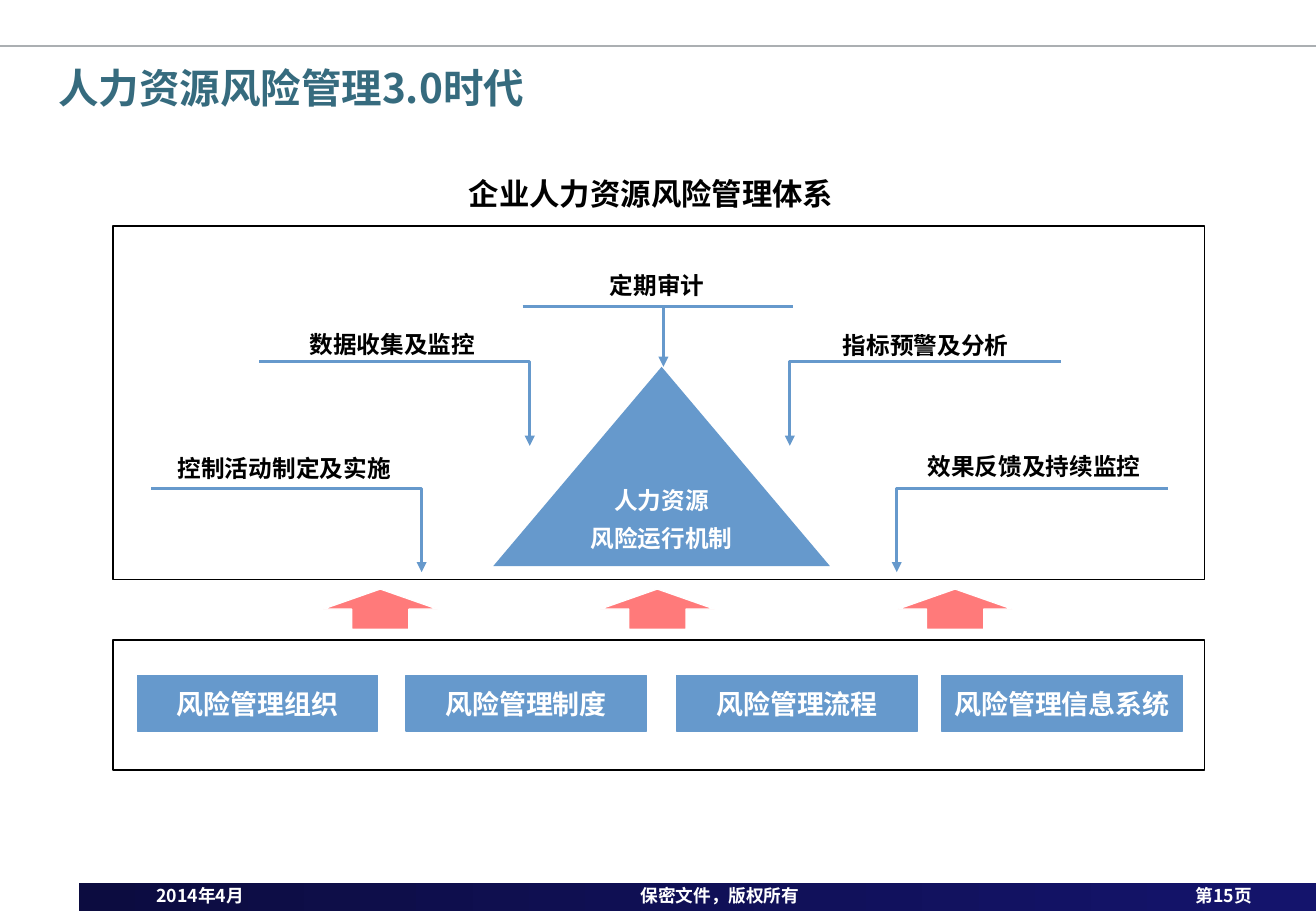
from lxml import etree
from pptx import Presentation, util as u
from pptx.dml.color import RGBColor
from pptx.enum import shapes, text
from pptx.oxml.ns import qn

FONT = "Noto Sans CJK SC"
BLUE, WHITE, BLACK = "6699CC", "FFFFFF", "000000"
CENTER, LEFT = text.PP_ALIGN.CENTER, text.PP_ALIGN.LEFT
TOP, MIDDLE, BOTTOM = (text.MSO_ANCHOR.TOP, text.MSO_ANCHOR.MIDDLE,
                       text.MSO_ANCHOR.BOTTOM)


def rgb(value):
    return RGBColor.from_string(value)


def apply(target, values):
    for name, value in values.items():
        setattr(target, name, value)


class SlideBuilder:
    def __init__(self, slide):
        self.slide = slide

    def put_text(self, item, words, size, color, font=FONT, anchor=MIDDLE,
                 wrap=True, inset=None, **paragraph_format):
        """Fill a shape with one bold paragraph per line of words."""
        frame = item.text_frame
        apply(frame, {"word_wrap": wrap, "vertical_anchor": anchor})
        if inset is not None:
            sides = ("left", "top", "right", "bottom")
            apply(frame, {f"margin_{side}": u.Inches(inset) for side in sides})
        for number, line in enumerate(words.split("\n")):
            paragraph = frame.add_paragraph() if number else frame.paragraphs[0]
            apply(paragraph, {"alignment": CENTER, **paragraph_format})
            run = paragraph.add_run()
            run.text = line
            apply(run.font, {"name": font, "size": u.Pt(size), "bold": True})
            run.font.color.rgb = rgb(color)
            east_asian = etree.SubElement(run.font._element, qn("a:ea"))
            east_asian.set("typeface", FONT)

    def label(self, box, words, size, color, **style):
        item = self.slide.shapes.add_textbox(*map(u.Inches, box))
        self.put_text(item, words, size, color, **style)

    def shape(self, kind, box, fill=None, line=None, alpha=None):
        item = self.slide.shapes.add_shape(kind, *map(u.Inches, box))
        item.shadow.inherit = False
        if fill:
            item.fill.solid()
            item.fill.fore_color.rgb = rgb(fill)
        else:
            item.fill.background()
        if alpha:
            color = item.fill._xPr.find(f".//{qn('a:srgbClr')}")
            etree.SubElement(color, qn("a:alpha")).set("val", str(alpha * 1000))
        self.outline(item, line, 0.75)
        return item

    def outline(self, item, color, width, arrow=None):
        """Style a line; arrow names the end element that gets a triangle."""
        if not color:
            item.line.fill.background()
            return
        item.line.color.rgb = rgb(color)
        item.line.width = u.Pt(width)
        if arrow:
            end = etree.SubElement(item.line._get_or_add_ln(), qn(arrow))
            end.set("type", "triangle")

    def connector(self, start, end, color, width, arrow=None):
        item = self.slide.shapes.add_connector(
            shapes.MSO_CONNECTOR.STRAIGHT, *map(u.Inches, (*start, *end)))
        self.outline(item, color, width, arrow)
        etree.SubElement(item._element.spPr, qn("a:effectLst"))

    def elbow(self, tip, corner, far):
        """Draw a bent line with its arrowhead at tip."""
        points = [tuple(map(u.Inches, point)) for point in (tip, corner, far)]
        builder = self.slide.shapes.build_freeform(*points[0])
        builder.add_line_segments(points[1:], close=False)
        item = builder.convert_to_shape()
        item.shadow.inherit = False
        item.fill.background()
        self.outline(item, BLUE, 1.75, "a:headEnd")

    def footer_bar(self, box, start, end):
        bar = self.shape(shapes.MSO_SHAPE.RECTANGLE, box, start)
        bar.fill.gradient()
        bar.fill.gradient_angle = 0
        for stop, color in zip(bar.fill.gradient_stops, (start, end)):
            stop.color.rgb = rgb(color)


def main():
    deck = Presentation()
    apply(deck, {"slide_width": u.Inches(10.83), "slide_height": u.Inches(7.5)})
    page = SlideBuilder(deck.slides.add_slide(deck.slide_layouts[6]))
    kinds = shapes.MSO_SHAPE

    page.footer_bar((0.65, 7.27, 10.18, 0.23), "0C0C40", "14146C")
    for left, width, words, alignment in (
            (9.26, 1.62, "第15页", CENTER),
            (1.19, 1.81, "2014年4月", LEFT),
            (2.99, 5.87, "保密文件，版权所有", CENTER)):
        page.label((left, 7.23, width, 0.28), words, 10.5, WHITE,
                   alignment=alignment)
    page.connector((0, 0.38), (10.83, 0.38), "ABAFB2", 1)
    page.label((0.38, 0.47, 10.46, 0.83), "人力资源风险管理3.0时代", 24, "366B7E",
               anchor=TOP, alignment=LEFT)
    page.label((3.76, 1.39, 3.23, 0.4), "企业人力资源风险管理体系", 18, BLACK,
               font="Times New Roman", anchor=TOP, wrap=False, alignment=LEFT)

    for top, height in ((1.86, 2.91), (5.27, 1.07)):
        page.shape(kinds.RECTANGLE, (0.93, top, 8.98, height), line=BLACK)

    spaced = {"inset": 0, "line_spacing": 1.2, "space_before": u.Pt(2.8)}
    mechanism = page.shape(kinds.ISOSCELES_TRIANGLE, (4.06, 3.02, 2.77, 1.64), BLUE)
    page.put_text(mechanism, "人力资源\n风险运行机制", 14, WHITE, wrap=False, **spaced)

    reach, drop = 2.23, 0.69
    for corner, level, side in ((7.38, 4.02, 1), (6.5, 2.98, 1),
                                (3.47, 4.02, -1), (4.36, 2.98, -1)):
        page.elbow((corner, level + drop), (corner, level),
                   (corner + side * reach, level))
    page.connector((4.3, 2.52), (6.53, 2.52), BLUE, 1.75)
    page.connector((5.46, 2.52), (5.46, 3.02), BLUE, 1.75, "a:tailEnd")

    for left, bottom, activity in ((2.13, 2.95, "数据收集及监控"),
                                   (6.52, 2.96, "指标预警及分析"),
                                   (1.24, 3.97, "控制活动制定及实施"),
                                   (7.41, 3.95, "效果反馈及持续监控"),
                                   (4.31, 2.46, "定期审计")):
        page.label((left, bottom - 0.3, 2.2, 0.3), activity, 14, BLACK,
                   anchor=BOTTOM, **spaced)

    for left, foundation in ((1.13, "风险管理组织"), (3.34, "风险管理制度"),
                             (5.57, "风险管理流程"), (7.75, "风险管理信息系统")):
        block = page.shape(kinds.RECTANGLE, (left, 5.56, 1.98, 0.46), BLUE, BLUE)
        page.put_text(block, foundation, 16, WHITE, wrap=False)
    for left in (2.66, 4.94, 7.39):
        page.shape(kinds.UP_ARROW, (left, 4.85, 0.94, 0.33), "FF0000", WHITE, 52)

    deck.save("out.pptx")


if __name__ == "__main__":
    main()
